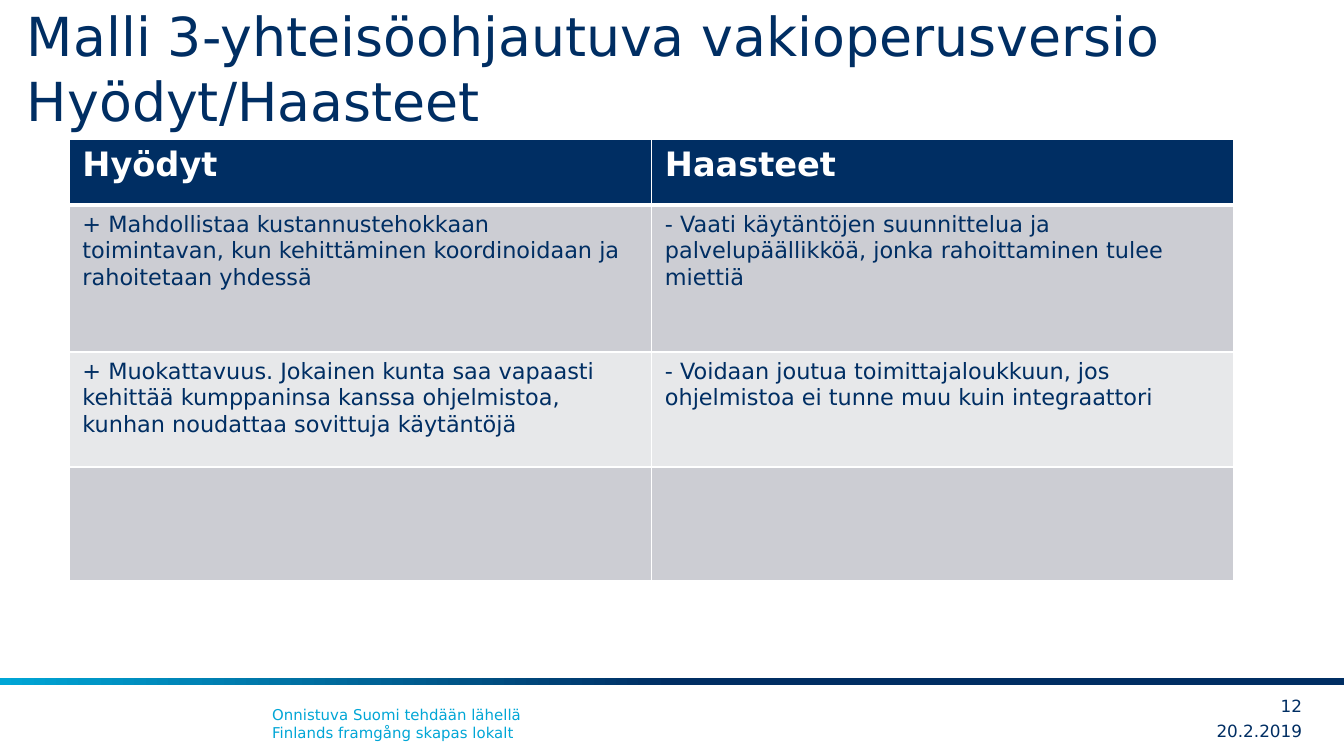
from lxml.etree import SubElement
from pptx import Presentation
from pptx.dml.color import RGBColor
from pptx.enum.shapes import MSO_SHAPE
from pptx.enum.text import MSO_ANCHOR, MSO_AUTO_SIZE, PP_ALIGN
from pptx.oxml.ns import qn
from pptx.util import Pt

TITLE = "Malli 3-yhteisöohjautuva vakioperusversio Hyödyt/Haasteet"
ROWS = [
    ("Hyödyt", "Haasteet"),
    ("+ Mahdollistaa kustannustehokkaan toimintavan, kun kehittäminen "
     "koordinoidaan ja rahoitetaan yhdessä",
     "- Vaati käytäntöjen suunnittelua ja palvelupäällikköä, "
     "jonka rahoittaminen tulee miettiä"),
    ("+ Muokattavuus. Jokainen kunta saa vapaasti kehittää kumppaninsa kanssa "
     "ohjelmistoa, kunhan noudattaa sovittuja käytäntöjä",
     "- Voidaan joutua toimittajaloukkuun, jos ohjelmistoa ei tunne muu "
     "kuin integraattori"),
    ("", ""),
]
ROW_HEIGHTS = [66, 147, 115, 114]
SLOGAN = "Onnistuva Suomi tehdään lähellä\vFinlands framgång skapas lokalt"
FOOTER = [("20.2.2019", (1169, 716, 133, 30)), ("12", (1245, 691, 57, 30))]

FONT = "DejaVu Sans"
COLORS = {"navy": "002E63", "cyan": "00A6D6", "white": "FFFFFF",
          "band": "CCCDD3", "light": "E7E8EA"}
FLUSH = {"margin_left": 0, "margin_right": 0}
SCALE = 914400 / 134.4


def px(*values):
    return [round(v * SCALE) for v in values]


def rgb(name):
    return RGBColor.from_string(COLORS[name])


def write(tf, text, size, color, bold=False, align=PP_ALIGN.LEFT, **frame):
    for name, value in frame.items():
        setattr(tf, name, value)
    p = tf.paragraphs[0]
    p.text = text
    p.alignment = align
    for name, value in {"name": FONT, "size": Pt(size), "bold": bold}.items():
        setattr(p.font, name, value)
    p.font.color.rgb = rgb(color)


def add_text(s, box, *args, **kwargs):
    tf = s.shapes.add_textbox(*px(*box)).text_frame
    write(tf, *args, word_wrap=True, **kwargs)


def set_borders(cell, bottom):
    """Draw white cell edges; widths are in points."""
    tc_pr = cell._tc.get_or_add_tcPr()
    widths = {"lnL": 1, "lnR": 1, "lnT": 1, "lnB": bottom}
    for tag, width in widths.items():
        ln = SubElement(tc_pr, qn(f"a:{tag}"), w=str(Pt(width)))
        fill = SubElement(ln, qn("a:solidFill"))
        SubElement(fill, qn("a:srgbClr"), val=COLORS["white"])


def add_comparison(s):
    table = s.shapes.add_table(len(ROWS), 2, *px(69, 139, 1165, sum(ROW_HEIGHTS))).table
    table.horz_banding = False
    for row, height in zip(table.rows, px(*ROW_HEIGHTS)):
        row.height = height
    for r, texts in enumerate(ROWS):
        header = r == 0
        color = "navy" if header else "band" if r % 2 else "light"
        for c, text in enumerate(texts):
            cell = table.cell(r, c)
            above_is_header = r == 1
            set_borders(cell, 3 if header else 1)
            if above_is_header:
                cell._tc.tcPr.find(qn("a:lnT")).set("w", str(Pt(3)))
            cell.fill.solid()
            cell.fill.fore_color.rgb = rgb(color)
            write(cell.text_frame, text, 18 if header else 12,
                  "white" if header else "navy", bold=header)


def add_footer_line(s):
    bar = s.shapes.add_shape(MSO_SHAPE.RECTANGLE, *px(0, 678, 1344, 7))
    bar.shadow.inherit = False
    bar.line.fill.background()
    bar.fill.gradient()
    bar.fill.gradient_angle = 180
    stops = [("navy", 0.5), ("cyan", 1)]
    for stop, (color, position) in zip(bar.fill.gradient_stops, stops):
        stop.color.rgb = rgb(color)
        stop.position = position


def main():
    prs = Presentation()
    prs.slide_width, prs.slide_height = px(1344, 756)
    s = prs.slides.add_slide(prs.slide_layouts[5])

    add_footer_line(s)
    add_text(s, (259, 699, 879, 50), SLOGAN, 8, "cyan")

    title = s.shapes.title
    title.left, title.top, title.width, title.height = px(27, 44, 1317, 95)
    write(title.text_frame, TITLE, 28.8, "navy", word_wrap=True,
          auto_size=MSO_AUTO_SIZE.NONE, vertical_anchor=MSO_ANCHOR.BOTTOM, **FLUSH)

    add_comparison(s)
    for text, box in FOOTER:
        add_text(s, box, text, 9, "navy", align=PP_ALIGN.RIGHT, margin_top=0,
                 margin_bottom=0, vertical_anchor=MSO_ANCHOR.MIDDLE, **FLUSH)
    prs.save("out.pptx")


if __name__ == "__main__":
    main()
